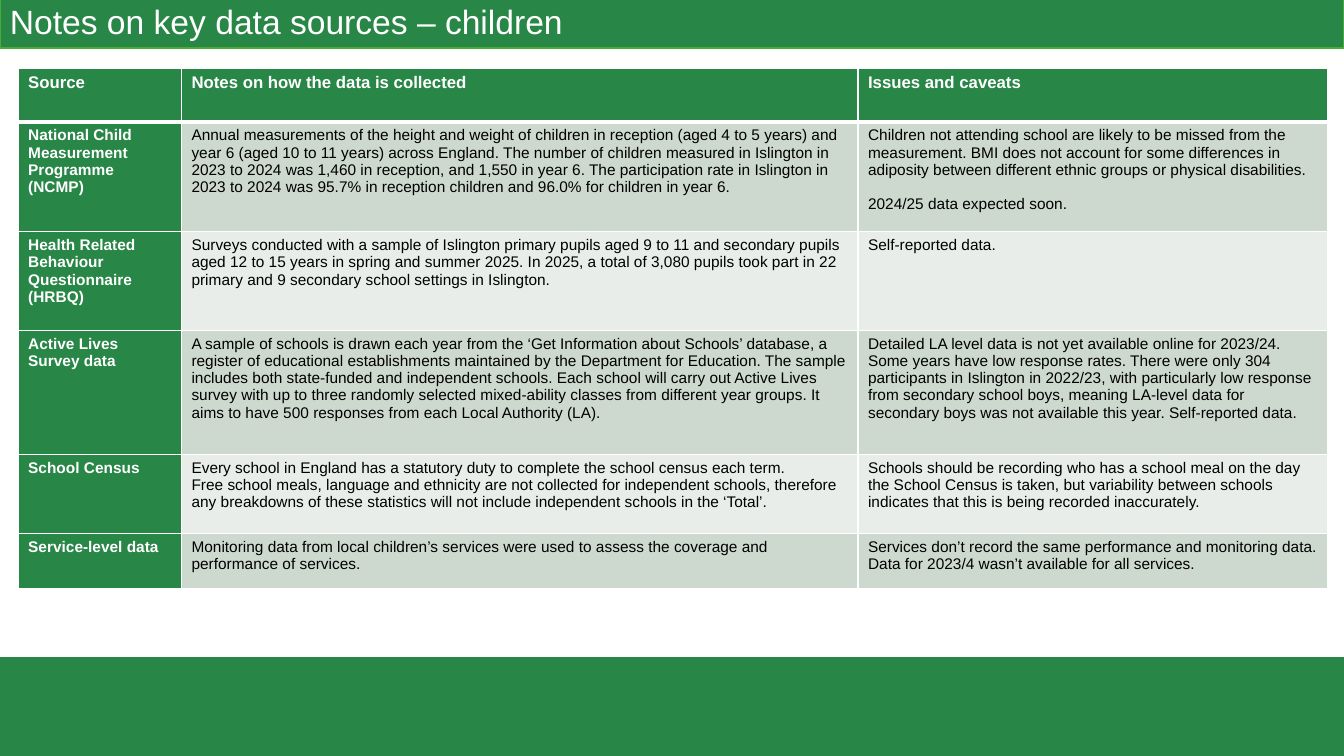
from pptx import Presentation
from pptx.dml.color import RGBColor
from pptx.enum.shapes import MSO_SHAPE as Shape
from pptx.enum.text import MSO_ANCHOR as Anchor, PP_ALIGN as Align
from pptx.oxml import parse_xml
from pptx.oxml.ns import nsdecls
from pptx.util import Inches, Pt

GREEN = RGBColor(0x28, 0x86, 0x47)
LIME = RGBColor(0x49, 0xAC, 0x33)
SAGE = RGBColor(0xCD, 0xD9, 0xCF)
MIST = RGBColor(0xE8, 0xED, 0xE9)
WHITE = RGBColor(0xFF, 0xFF, 0xFF)
BLACK = RGBColor(0, 0, 0)

FONT = "Arial"
SLIDE_WIDTH, SLIDE_HEIGHT = 13.33, 7.5
COLUMN_WIDTHS = [1.62, 6.71, 4.66]
ROW_HEIGHTS = [0.53, 1.09, 0.98, 1.23, 0.78, 0.55]

SOURCES = [
    ["Source", "Notes on how the data is collected", "Issues and caveats"],
    [
        "National Child Measurement Programme (NCMP)",
        "Annual measurements of the height and weight of children in reception (aged 4 to 5 years) "
        "and year 6 (aged 10 to 11 years) across England. The number of children measured in "
        "Islington in 2023 to 2024 was 1,460 in reception, and 1,550 in year 6. The participation "
        "rate in Islington in 2023 to 2024 was 95.7% in reception children and 96.0% for children "
        "in year 6.",
        "Children not attending school are likely to be missed from the measurement. BMI does not "
        "account for some differences in adiposity between different ethnic groups or physical "
        "disabilities.\n2024/25 data expected soon.",
    ],
    [
        "Health Related Behaviour Questionnaire (HRBQ)",
        "Surveys conducted with a sample of Islington primary pupils aged 9 to 11 and secondary "
        "pupils aged 12 to 15 years in spring and summer 2025. In 2025, a total of 3,080 pupils "
        "took part in 22 primary and 9 secondary school settings in Islington.",
        "Self-reported data.",
    ],
    [
        "Active Lives Survey data",
        "A sample of schools is drawn each year from the ‘Get Information about Schools’ database, "
        "a register of educational establishments maintained by the Department for Education. The "
        "sample includes both state-funded and independent schools. Each school will carry out "
        "Active Lives survey with up to three randomly selected mixed-ability classes from "
        "different year groups. It aims to have 500 responses from each Local Authority (LA).",
        "Detailed LA level data is not yet available online for 2023/24. Some years have low "
        "response rates. There were only 304 participants in Islington in 2022/23, with "
        "particularly low response from secondary school boys, meaning LA-level data for "
        "secondary boys was not available this year. Self-reported data.",
    ],
    [
        "School Census",
        "Every school in England has a statutory duty to complete the school census each term.\n"
        "Free school meals, language and ethnicity are not collected for independent schools, "
        "therefore any breakdowns of these statistics will not include independent schools in "
        "the ‘Total’.",
        "Schools should be recording who has a school meal on the day the School Census is taken, "
        "but variability between schools indicates that this is being recorded inaccurately.",
    ],
    [
        "Service-level data",
        "Monitoring data from local children’s services were used to assess the coverage and "
        "performance of services.",
        "Services don’t record the same performance and monitoring data. Data for 2023/4 wasn’t "
        "available for all services.",
    ],
]


def set_font(paragraph, size, color, bold=False):
    """Set the paragraph's typeface, size, colour and weight."""
    font = paragraph.font
    font.name, font.size, font.bold = FONT, Pt(size), bold
    font.color.rgb = color


def add_band(slide, left, top, width, height):
    """Add a plain green band and return it."""
    band = slide.shapes.add_shape(
        Shape.RECTANGLE, Inches(left), Inches(top), Inches(width), Inches(height))
    band.shadow.inherit = False
    band.fill.solid()
    band.fill.fore_color.rgb = GREEN
    band.line.fill.background()
    return band


def add_title(slide, title, left, top, width, height):
    """Add the outlined title band with left-aligned text."""
    band = add_band(slide, left, top, width, height)
    band.line.color.rgb = LIME
    band.line.width = Pt(1.5)
    frame = band.text_frame
    frame.word_wrap = True
    frame.vertical_anchor = Anchor.MIDDLE
    frame.margin_left = Inches(0.1)
    frame.margin_top = frame.margin_right = frame.margin_bottom = 0
    heading = frame.paragraphs[0]
    heading.text = title
    heading.alignment = Align.LEFT
    heading.line_spacing = 0.9
    set_font(heading, 24, WHITE)


def set_borders(cell, row):
    """Give the cell white borders, thick between header and body."""
    widths = {"L": 1, "R": 1, "T": 3 if row == 1 else 1, "B": 3 if row == 0 else 1}
    properties = cell._tc.get_or_add_tcPr()
    for side, width in widths.items():
        properties.append(parse_xml(
            f'<a:ln{side} {nsdecls("a")} w="{Pt(width)}"><a:solidFill>'
            f'<a:srgbClr val="{WHITE}"/></a:solidFill></a:ln{side}>'))


def add_sources_table(slide, left, top):
    """Add the table of data sources with its top left corner at the given point."""
    table = slide.shapes.add_table(
        len(ROW_HEIGHTS), len(COLUMN_WIDTHS), Inches(left), Inches(top),
        Inches(sum(COLUMN_WIDTHS)), Inches(sum(ROW_HEIGHTS))).table
    for column, width in zip(table.columns, COLUMN_WIDTHS):
        column.width = Inches(width)
    for row, height in zip(table.rows, ROW_HEIGHTS):
        row.height = Inches(height)
    for row, entries in enumerate(SOURCES):
        for column, entry in enumerate(entries):
            cell = table.cell(row, column)
            is_heading = row == 0 or column == 0
            set_borders(cell, row)
            cell.fill.solid()
            cell.fill.fore_color.rgb = GREEN if is_heading else SAGE if row % 2 else MIST
            cell.text = entry
            for paragraph in cell.text_frame.paragraphs:
                set_font(paragraph, 11 if row else 12, WHITE if is_heading else BLACK, is_heading)
    release_note = table.cell(1, 2).text_frame.paragraphs[1]
    release_note.space_before = Pt(12.5)


def main():
    """Build the slide and save it."""
    deck = Presentation()
    deck.slide_width, deck.slide_height = Inches(SLIDE_WIDTH), Inches(SLIDE_HEIGHT)
    slide = deck.slides.add_slide(deck.slide_layouts[6])
    add_band(slide, 0, 6.52, SLIDE_WIDTH, 0.98)
    add_title(slide, "Notes on key data sources – children", 0, -0.01, SLIDE_WIDTH, 0.49)
    add_sources_table(slide, 0.18, 0.68)
    deck.save("out.pptx")


if __name__ == "__main__":
    main()
